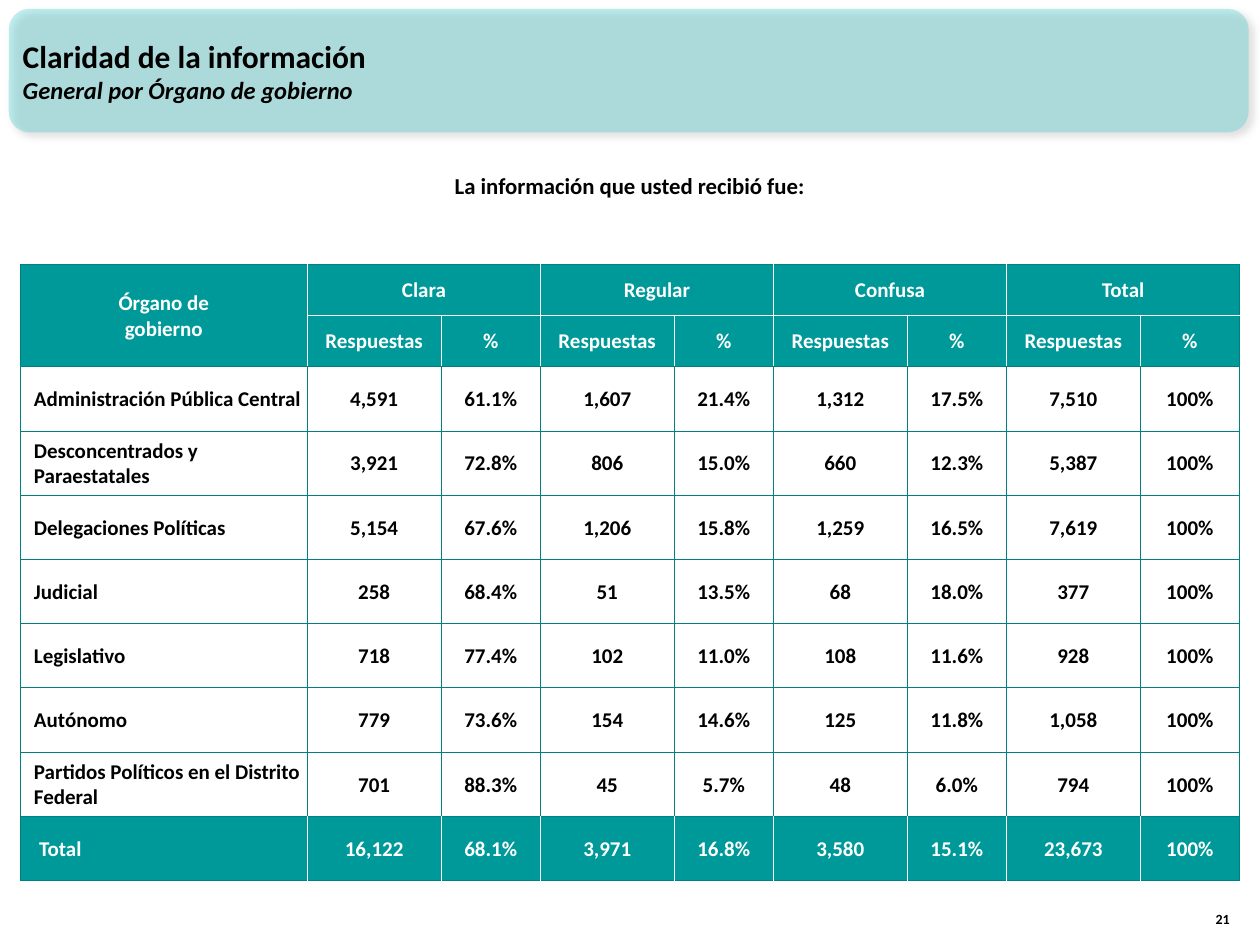
from lxml import etree
from pptx import Presentation
from pptx.dml.color import RGBColor
from pptx.enum.shapes import MSO_SHAPE
from pptx.enum.text import MSO_ANCHOR, MSO_AUTO_SIZE, PP_ALIGN
from pptx.oxml.ns import qn
from pptx.util import Inches, Pt

LEFT, CENTER, RIGHT = PP_ALIGN.LEFT, PP_ALIGN.CENTER, PP_ALIGN.RIGHT
TOP, MIDDLE, BOTTOM = MSO_ANCHOR.TOP, MSO_ANCHOR.MIDDLE, MSO_ANCHOR.BOTTOM
ROUNDED = MSO_SHAPE.ROUNDED_RECTANGLE
NO_FIT = MSO_AUTO_SIZE.NONE

COLORS = {
    "banner": "33CCCC",
    "header": "009999",
    "grid": "008080",
    "white": "FFFFFF",
    "black": "000000",
}

GROUPS = ["Clara", "Regular", "Confusa", "Total"]
ROWS = [
    ["Administración Pública Central", "4,591", "61.1%", "1,607", "21.4%", "1,312", "17.5%", "7,510", "100%"],
    ["Desconcentrados y Paraestatales", "3,921", "72.8%", "806", "15.0%", "660", "12.3%", "5,387", "100%"],
    ["Delegaciones Políticas", "5,154", "67.6%", "1,206", "15.8%", "1,259", "16.5%", "7,619", "100%"],
    ["Judicial", "258", "68.4%", "51", "13.5%", "68", "18.0%", "377", "100%"],
    ["Legislativo", "718", "77.4%", "102", "11.0%", "108", "11.6%", "928", "100%"],
    ["Autónomo", "779", "73.6%", "154", "14.6%", "125", "11.8%", "1,058", "100%"],
    ["Partidos Políticos en el Distrito Federal", "701", "88.3%", "45", "5.7%", "48", "6.0%", "794", "100%"],
    ["Total", "16,122", "68.1%", "3,971", "16.8%", "3,580", "15.1%", "23,673", "100%"],
]


class SlideBuilder:
    def __init__(self, page):
        self.page = page
        self.font = {"name": "Calibri", "bold": True}

    def paragraphs(self, frame, lines, color="black", align=LEFT, indent=0):
        for index, (text, size, extra) in enumerate(lines):
            para = frame.paragraphs[0] if index == 0 else frame.add_paragraph()
            para.alignment = align
            if indent:
                para._p.get_or_add_pPr().set("marL", str(Inches(indent)))
            span = para.add_run()
            span.text = text
            for key, value in {**self.font, "size": Pt(size), **extra}.items():
                setattr(span.font, key, value)
            span.font.color.rgb = RGBColor.from_string(COLORS[color])

    def title(self, place, lines):
        box = self.page.shapes.title
        box.left, box.top, box.width, box.height = map(Inches, place)
        box.text_frame.auto_size = NO_FIT
        box.text_frame.vertical_anchor = MIDDLE
        self.paragraphs(box.text_frame, lines)

    def banner(self, place):
        panel = self.page.shapes.add_shape(ROUNDED, *map(Inches, place))
        panel.fill.solid()
        panel.fill.fore_color.rgb = RGBColor.from_string(COLORS["banner"])
        panel.line.fill.background()
        panel.shadow.inherit = False
        properties = panel._element.spPr
        fill = properties.find(qn("a:solidFill"))[0]
        etree.SubElement(fill, qn("a:alpha"), val="30000")
        shadow = etree.SubElement(
            properties.find(qn("a:effectLst")), qn("a:outerShdw"),
            blurRad=str(Pt(4)), dist=str(Pt(3)), dir="2700000", algn="tl", rotWithShape="0")
        shade = etree.SubElement(shadow, qn("a:srgbClr"), val=COLORS["black"])
        etree.SubElement(shade, qn("a:alpha"), val="40000")
        self.page.shapes.title._element.addprevious(panel._element)

    def text(self, place, text, size, align, anchor=TOP):
        box = self.page.shapes.add_textbox(*map(Inches, place))
        box.text_frame.word_wrap = True
        box.text_frame.vertical_anchor = anchor
        self.paragraphs(box.text_frame, [(text, size, {})], align=align)

    def border(self, cell, sides):
        properties = cell._tc.get_or_add_tcPr()
        for side, color in sides.items():
            line = etree.SubElement(properties, qn(f"a:ln{side}"), w=str(Pt(0.5)))
            fill = etree.SubElement(line, qn("a:solidFill"))
            etree.SubElement(fill, qn("a:srgbClr"), val=COLORS[color])

    def cell(self, cell, lines, dark, align, indent, sides):
        margins = {"margin_left": 0.01, "margin_right": 0.01, "margin_top": 0.01, "margin_bottom": 0}
        for key, value in margins.items():
            setattr(cell, key, Inches(value))
        cell.vertical_anchor = MIDDLE
        self.border(cell, sides)
        if dark:
            cell.fill.solid()
            cell.fill.fore_color.rgb = RGBColor.from_string(COLORS["header"])
        else:
            cell.fill.background()
        self.paragraphs(cell.text_frame, [(line, 12, {}) for line in lines],
                        "white" if dark else "black", align, indent)

    def table(self, place, widths, heights, rows):
        table = self.page.shapes.add_table(len(heights), len(widths), *map(Inches, place)).table
        table.first_row = table.horz_banding = False
        for column, width in zip(table.columns, widths):
            column.width = Inches(width)
        for row, height in zip(table.rows, heights):
            row.height = Inches(height)
        table.cell(0, 0).merge(table.cell(1, 0))
        for first in range(1, len(widths), 2):
            table.cell(0, first).merge(table.cell(0, first + 1))

        last_row, last_column = len(heights) - 1, len(widths) - 1
        for r, values in enumerate(rows):
            for c, value in enumerate(values):
                cell = table.cell(r, c)
                dark = r < 2 or r == last_row
                label = c == 0 and r > 1
                end = c + (cell.span_width if cell.is_merge_origin else 1) - 1
                white = {
                    "L": dark and c > 0,
                    "R": dark and end < last_column,
                    "T": r == 1 and c > 0,
                    "B": r == 0 and c > 0,
                }
                sides = {side: "white" if on else "grid" for side, on in white.items()}
                indent = (0.14 if dark else 0.1) if label else 0
                lines = value.split("\n") if value else []
                self.cell(cell, lines, dark, LEFT if label else CENTER, indent, sides)


def main():
    deck = Presentation()
    deck.slide_width, deck.slide_height = Inches(10), Inches(7.5)
    builder = SlideBuilder(deck.slides.add_slide(deck.slide_layouts[5]))

    builder.banner((0.07, 0.07, 9.84, 0.98))
    builder.title((0.08, 0.09, 9.17, 0.94), [
        ("Claridad de la información", 18, {}),
        ("General por Órgano de gobierno", 14, {"italic": True}),
    ])
    builder.text((9.46, 7.01, 0.4, 0.4), "21", 8, RIGHT, BOTTOM)
    builder.text((0.89, 1.31, 8.21, 0.32), "La información que usted recibió fue:", 13, CENTER)

    group_row = ["Órgano de\ngobierno"] + [text for group in GROUPS for text in (group, "")]
    measure_row = [""] + ["Respuestas", "%"] * len(GROUPS)
    builder.table(
        (0.16, 2.1, 9.69, 4.88),
        [2.28] + [1.06, 0.79] * len(GROUPS),
        [0.4] * 2 + [0.51] * len(ROWS),
        [group_row, measure_row] + ROWS,
    )
    deck.save("out.pptx")


if __name__ == "__main__":
    main()
